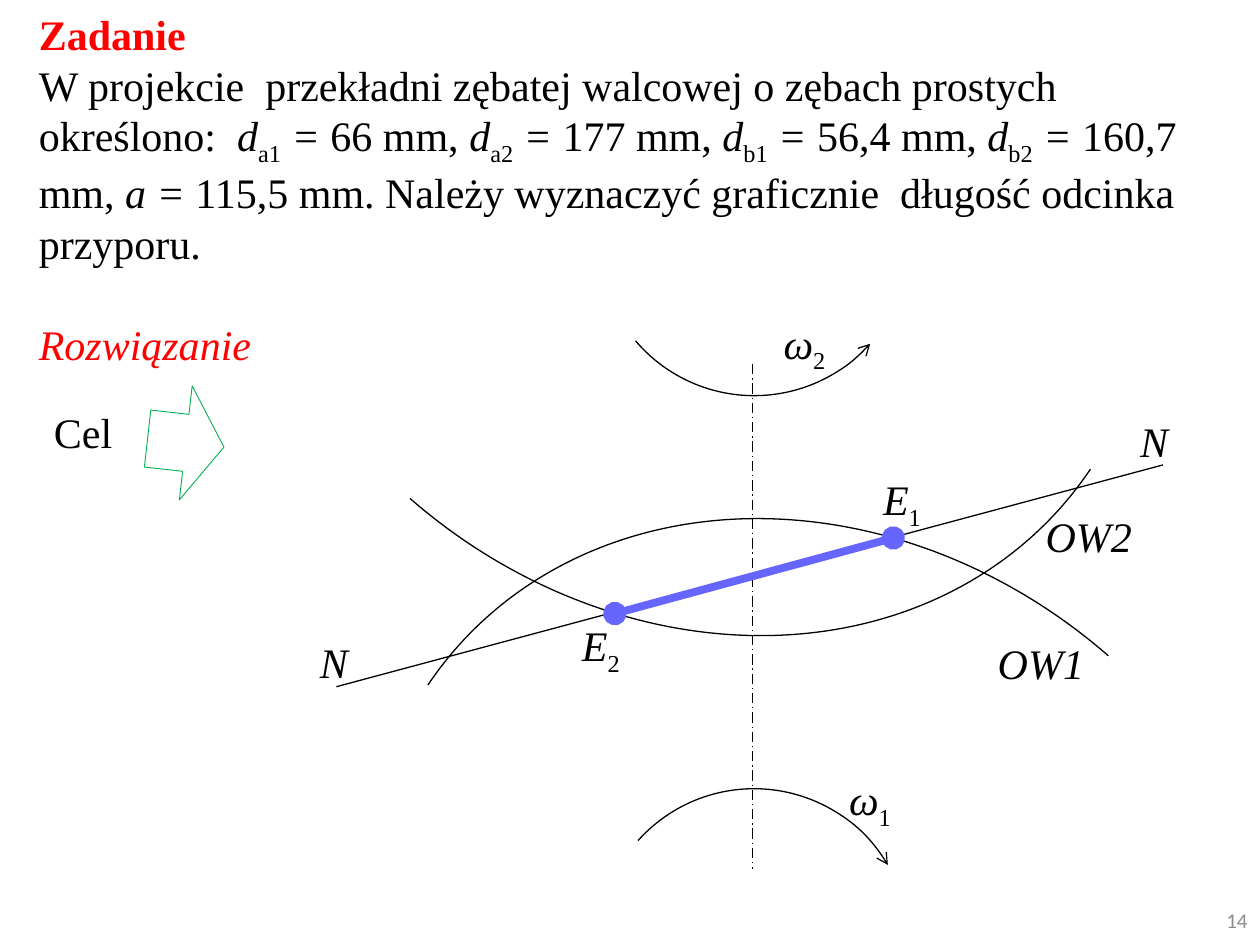
from dataclasses import dataclass
from typing import Any, Optional

import lxml.etree
import pptx
import pptx.dml.color
import pptx.enum.dml
import pptx.enum.shapes
import pptx.enum.text
import pptx.oxml.ns
import pptx.util

COLORS = {"ink": "000000", "accent": "FF0000", "segment": "6666FF",
          "arrow": "00B050", "number": "8C8C8C"}
SERIF = "Times New Roman"
COLS, ROWS = 100, 75
SHAPE = pptx.enum.shapes.MSO_SHAPE

prs = pptx.Presentation()
prs.slide_width = pptx.util.Inches(10)
prs.slide_height = pptx.util.Inches(7.5)
s = prs.slides.add_slide(prs.slide_layouts[6])


@dataclass(frozen=True)
class Run:
    text: str
    italic: bool = False
    sub: bool = False
    bold: bool = False
    color: str = "ink"
    font: str = SERIF
    size: float = 24


@dataclass(frozen=True)
class Box:
    col: float
    row: float
    cols: float
    rows: float


@dataclass(frozen=True)
class Outline:
    preset: Any
    box: Box
    rotation: float = 0
    adjust: tuple[float, ...] = ()
    color: str = "ink"
    width: float = 0.75
    head: Optional[str] = None
    tail: Optional[str] = None


@dataclass(frozen=True)
class Line:
    start: tuple[float, float]
    end: tuple[float, float]
    color: str = "ink"
    width: float = 0.75
    dash: Any = None
    ends: Optional[str] = None


@dataclass(frozen=True)
class Label:
    box: Box
    text: str
    index: str = ""


def x(col: float) -> int:
    return round(prs.slide_width * col / COLS)


def y(row: float) -> int:
    return round(prs.slide_height * row / ROWS)


def place(box: Box) -> tuple[int, int, int, int]:
    return x(box.col), y(box.row), x(box.cols), y(box.rows)


def rgb(name: str) -> pptx.dml.color.RGBColor:
    return pptx.dml.color.RGBColor.from_string(COLORS[name])


def style_line(sp: Any, color: str, width: float, head: Optional[str], tail: Optional[str]) -> None:
    sp.line.color.rgb = rgb(color)
    sp.line.width = pptx.util.Pt(width)
    ln = sp.line._get_or_add_ln()
    for tag, kind in (("a:headEnd", head), ("a:tailEnd", tail)):
        if kind:
            lxml.etree.SubElement(ln, pptx.oxml.ns.qn(tag), type=kind)


def add_text(shapes: Any, box: Box, paragraphs: list[list[Run]]) -> Any:
    sp = shapes.add_textbox(*place(box))
    tf = sp.text_frame
    tf.word_wrap = True
    for i, runs in enumerate(paragraphs):
        p = tf.paragraphs[0] if i == 0 else tf.add_paragraph()
        for run in runs:
            r = p.add_run()
            r.text = run.text
            r.font.name = run.font
            r.font.size = pptx.util.Pt(run.size)
            r.font.bold = run.bold
            r.font.italic = run.italic
            r.font.color.rgb = rgb(run.color)
            if run.sub:
                r._r.get_or_add_rPr().set("baseline", "-25000")
    return tf


def add_outline(shapes: Any, o: Outline) -> None:
    sp = shapes.add_shape(o.preset, *place(o.box))
    sp.shadow.inherit = False
    sp.fill.background()
    sp.rotation = o.rotation
    for i, value in enumerate(o.adjust):
        sp.adjustments[i] = value
    style_line(sp, o.color, o.width, o.head, o.tail)


def add_line(shapes: Any, line: Line) -> None:
    sp = shapes.add_connector(pptx.enum.shapes.MSO_CONNECTOR.STRAIGHT,
                              x(line.start[0]), y(line.start[1]), x(line.end[0]), y(line.end[1]))
    if line.dash:
        sp.line.dash_style = line.dash
    style_line(sp, line.color, line.width, line.ends, line.ends)
    lxml.etree.SubElement(sp._element.spPr, pptx.oxml.ns.qn("a:effectLst"))


def symbol(name: str, index: str) -> list[Run]:
    return [Run(name, italic=True)] + ([Run(index, sub=True)] if index else [])


DIAMETERS = [("a1", "66 mm, "), ("a2", "177 mm, "), ("b1", "56,4 mm, "), ("b2", "160,7 mm, ")]
task = [Run("W projekcie  przekładni zębatej walcowej o zębach prostych określono:  ")]
for index, value in DIAMETERS:
    task += symbol("d", index) + [Run(" = ", italic=True), Run(value)]
task += [Run("a = ", italic=True),
         Run("115,5 mm. Należy wyznaczyć graficznie  długość odcinka")]

OUTLINES = [
    Outline(SHAPE.ARC, Box(32.2, 38, 67.3, 78.8), 311.1, (158.85, 0)),
    Outline(SHAPE.ARC, Box(21, -25.2, 67.3, 78.8), 131.1, (158.85, 0)),
    Outline(SHAPE.ARC, Box(47.5, 62.6, 24.7, 24.7), 0, (133.08, 197.59), tail="arrow"),
    Outline(SHAPE.ARC, Box(47.5, 6.7, 24.7, 24.7), 180, (133.08, 191.76), head="arrow"),
    Outline(SHAPE.RIGHT_ARROW, Box(11.7, 30.6, 6.1, 9.1), 6.4, color="arrow", width=0.5),
]
LINES = [
    Line((59.7, 28.9), (59.7, 69), dash=pptx.enum.dml.MSO_LINE.LONG_DASH_DOT),
    Line((26.7, 54.5), (92.3, 36.9)),
    Line((48.8, 48.7), (70.9, 42.7), "segment", 4.5, ends="oval"),
]
LABELS = [
    Label(Box(24.4, 50, 6, 5), "N"),
    Label(Box(89.5, 32.5, 6, 5), "N"),
    Label(Box(45.2, 48.7, 5.8, 5), "E", "2"),
    Label(Box(69.1, 37.1, 6.1, 5), "E", "1"),
    Label(Box(82, 40, 10, 5), "OW2"),
    Label(Box(78.2, 50.1, 10, 5), "OW1"),
    Label(Box(61.2, 24.7, 5.8, 5), "ω", "2"),
    Label(Box(66.4, 60.9, 5.8, 5), "ω", "1"),
]

tf = add_text(s.shapes, Box(92.5, 71, 7.5, 4),
              [[Run("14", color="number", font="Calibri", size=12)]])
tf.vertical_anchor = pptx.enum.text.MSO_ANCHOR.MIDDLE
tf.paragraphs[0].alignment = pptx.enum.text.PP_ALIGN.RIGHT

tf = add_text(s.shapes, Box(2.1, 0.2, 96, 29.3),
              [[Run("Zadanie", bold=True, color="accent")], task, [Run("przyporu.")],
               [Run("Rozwiązanie", italic=True, color="accent")]])
tf.paragraphs[-1].space_before = pptx.util.Pt(28.8)

for outline in OUTLINES:
    add_outline(s.shapes, outline)

diagram = s.shapes.add_group_shape().shapes
for line in LINES:
    add_line(diagram, line)
for label in LABELS:
    add_text(diagram, label.box, [symbol(label.text, label.index)])

add_text(s.shapes, Box(3.3, 31.8, 8.5, 5), [[Run("Cel")]])

prs.save("out.pptx")
